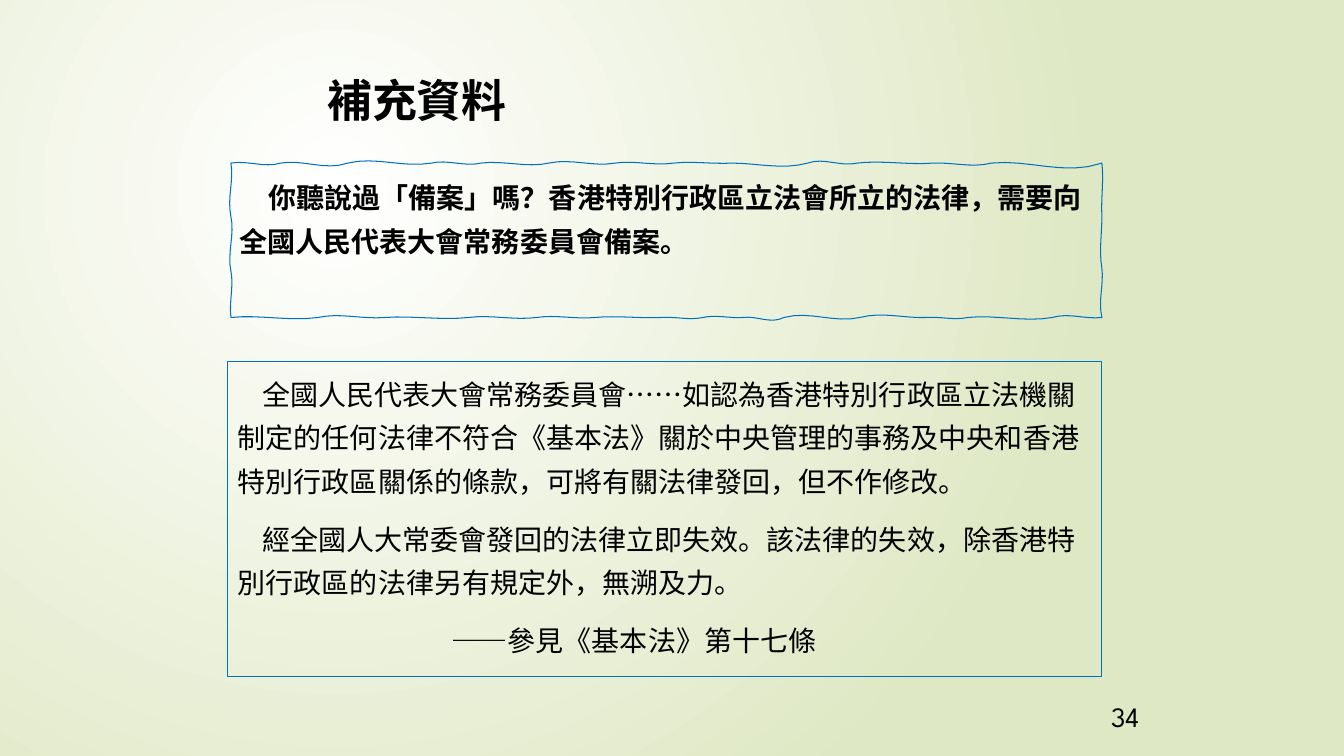
from dataclasses import dataclass

from lxml import etree
from pptx import Presentation
from pptx import util as u
from pptx.dml import color
from pptx.enum import text as t
from pptx.oxml import ns

INK, BLUE = "000000", "0070C0"
SANS, SERIF, PAGE = "Calibri", "Times New Roman", "League Spartan"


@dataclass
class Box:
    left: float
    top: float
    width: float
    height: float


@dataclass
class Wave:
    """One curve of a wavy edge: its end in percent, and two bends in 1/40 cm."""
    end: float
    first: int
    last: int


HEAD = Box(7.54, 1.55, 5.94, 1.94)
NOTE = Box(5.82, 4.11, 21.95, 3.89)
LAW = Box(5.74, 9.12, 22.02, 7.92)
NUMBER = Box(27.33, 17.55, 1.63, 1.02)

# Wavy edges, clockwise from the top left
TOP = [Wave(*w) for w in (
    (5.7, -3, 5), (13.4, -4, 8), (23, -7, 5), (28.7, -4, 4), (36.5, -3, 5),
    (44.1, -5, 4), (50.8, -3, 3), (57.5, -2, 1), (66.2, 0, 7), (71.9, -6, 4),
    (80.6, -3, 2), (87.3, -1, 5), (100, -4, 13))]
RIGHT = [Wave(*w) for w in ((34.6, 2, -1), (68, 0, -3), (100, 2, -4))]
BOTTOM = [Wave(*w) for w in (
    (5.7, 2, -5), (15.4, 5, -3), (20.1, 3, -1), (27.8, 1, -6), (36.5, 6, -7),
    (41.2, 7, -2), (45.8, 1, -3), (50.6, 3, -1), (58.2, 1, -2), (64.9, 2, -3),
    (72.7, 3, -3), (82.3, 3, -2), (90, 2, -5), (100, 4, -3))]
LEFT = [Wave(*w) for w in ((30, -2, 3), (65.4, -4, 4), (100, -4, 3))]


def paint(code: str) -> color.RGBColor:
    return color.RGBColor.from_string(code)


def place(shape, box: Box) -> None:
    shape.left, shape.top = u.Cm(box.left), u.Cm(box.top)
    shape.width, shape.height = u.Cm(box.width), u.Cm(box.height)


def outline(shape) -> None:
    shape.fill.background()
    shape.line.color.rgb = paint(BLUE)
    shape.line.width = u.Pt(0.75)


def setup(shape, anchor=t.MSO_ANCHOR.TOP):
    frame = shape.text_frame
    frame.word_wrap = True
    frame.auto_size = t.MSO_AUTO_SIZE.NONE
    frame.vertical_anchor = anchor
    return frame


def write(para, words: str, *, size: float = 20, font: str = SANS,
          bold: bool = False, align=t.PP_ALIGN.LEFT, space: float = 1,
          before: float = 0, indent: float = 0) -> None:
    """Add a run to a paragraph and format both."""
    run = para.add_run()
    run.text = words
    run.font.size, run.font.name, run.font.bold = u.Pt(size), font, bold
    run.font.color.rgb = paint(INK)
    para.alignment, para.line_spacing = align, space
    para.space_before = u.Pt(before)
    props = para._p.get_or_add_pPr()
    props.set("marL", "0")
    props.set("indent", str(u.Cm(indent)))
    if props.find(ns.qn("a:buNone")) is None:
        etree.SubElement(props, ns.qn("a:buNone"))


def trace(edge: list[Wave], size: float) -> list[tuple[float, float]]:
    """Points (distance along the edge, shift across it) in cm."""
    points, start, steps = [], 0.0, 8
    for wave in edge:
        for step in range(1, steps + 1):
            f = step / steps
            bend = 3 * f * (1 - f) * ((1 - f) * wave.first + f * wave.last)
            along = start + (wave.end - start) * f
            points.append((along * size / 100, bend / 40))
        start = wave.end
    return points


def ripple(slide, box: Box):
    """Draw a box with wavy edges."""
    x, y, w, h = box.left, box.top, box.width, box.height
    points = [(x + a, y + s) for a, s in trace(TOP, w)]
    points += [(x + w + s, y + a) for a, s in trace(RIGHT, h)]
    points += [(x + w - a, y + h + s) for a, s in trace(BOTTOM, w)]
    points += [(x + s, y + h - a) for a, s in trace(LEFT, h)]
    path = [(u.Cm(a), u.Cm(b)) for a, b in points]
    pen = slide.shapes.build_freeform(u.Cm(x), u.Cm(y))
    pen.add_line_segments(path, close=True)
    shape = pen.convert_to_shape()
    shape.shadow.inherit = False
    outline(shape)
    return shape


def backdrop(slide) -> None:
    """Round gradient, white to pale green."""
    fill = slide.background.fill
    fill.gradient()
    for stop, code in zip(fill.gradient_stops, ("FFFFFF", "DFE8C4")):
        stop.color.rgb = paint(code)
    line = slide._element.find(".//" + ns.qn("a:lin"))
    ring = etree.Element(ns.qn("a:path"), path="circle")
    etree.SubElement(ring, ns.qn("a:fillToRect"),
                     l="50000", t="50000", r="100000", b="100000")
    line.getparent().replace(line, ring)


def main() -> None:
    deck = Presentation()
    deck.slide_width, deck.slide_height = u.Cm(33.87), u.Cm(19.05)
    slide = deck.slides.add_slide(deck.slide_layouts[1])
    backdrop(slide)

    # Title
    title = slide.shapes.title
    place(title, HEAD)
    frame = setup(title, t.MSO_ANCHOR.MIDDLE)
    write(frame.paragraphs[0], "補充資料", size=32, bold=True,
          align=t.PP_ALIGN.CENTER)

    # Question in the wavy box
    frame = setup(ripple(slide, NOTE))
    frame.margin_top = u.Cm(0.25)
    write(frame.paragraphs[0],
          "你聽說過「備案」嗎？香港特別行政區立法會所立的法律，需要向全國人民代表大會常務委員會備案。",
          bold=True, space=1.3, indent=0.73)

    # Articles of the law
    body = slide.placeholders[1]
    place(body, LAW)
    outline(body)
    frame = setup(body)
    rows = (
        (0.61, [("全國人民代表大會常務委員會……如認為香港特別行政區立法機關制定的任何法律不符合《基本法》關於中央管理的事務及中央和香港特別行政區關係的條款，可將有關法律發回，但不作修改。", SANS)]),
        (0.61, [("經全國人大常委會發回的法律立即失效。該法律的失效，除香港特別行政區的法律另有規定外，無溯及力。", SANS)]),
        (5.39, [("——參見《基本法》第", SANS), ("十七", SERIF), ("條", SANS)]),
    )
    for i, (indent, runs) in enumerate(rows):
        para = frame.add_paragraph() if i else frame.paragraphs[0]
        for words, font in runs:
            write(para, words, font=font, space=1.3, before=10, indent=indent)

    # Page number
    page = slide.shapes.add_textbox(0, 0, 0, 0)
    place(page, NUMBER)
    frame = setup(page, t.MSO_ANCHOR.MIDDLE)
    write(frame.paragraphs[0], "34", font=PAGE, align=t.PP_ALIGN.RIGHT)

    deck.save("out.pptx")


if __name__ == "__main__":
    main()
